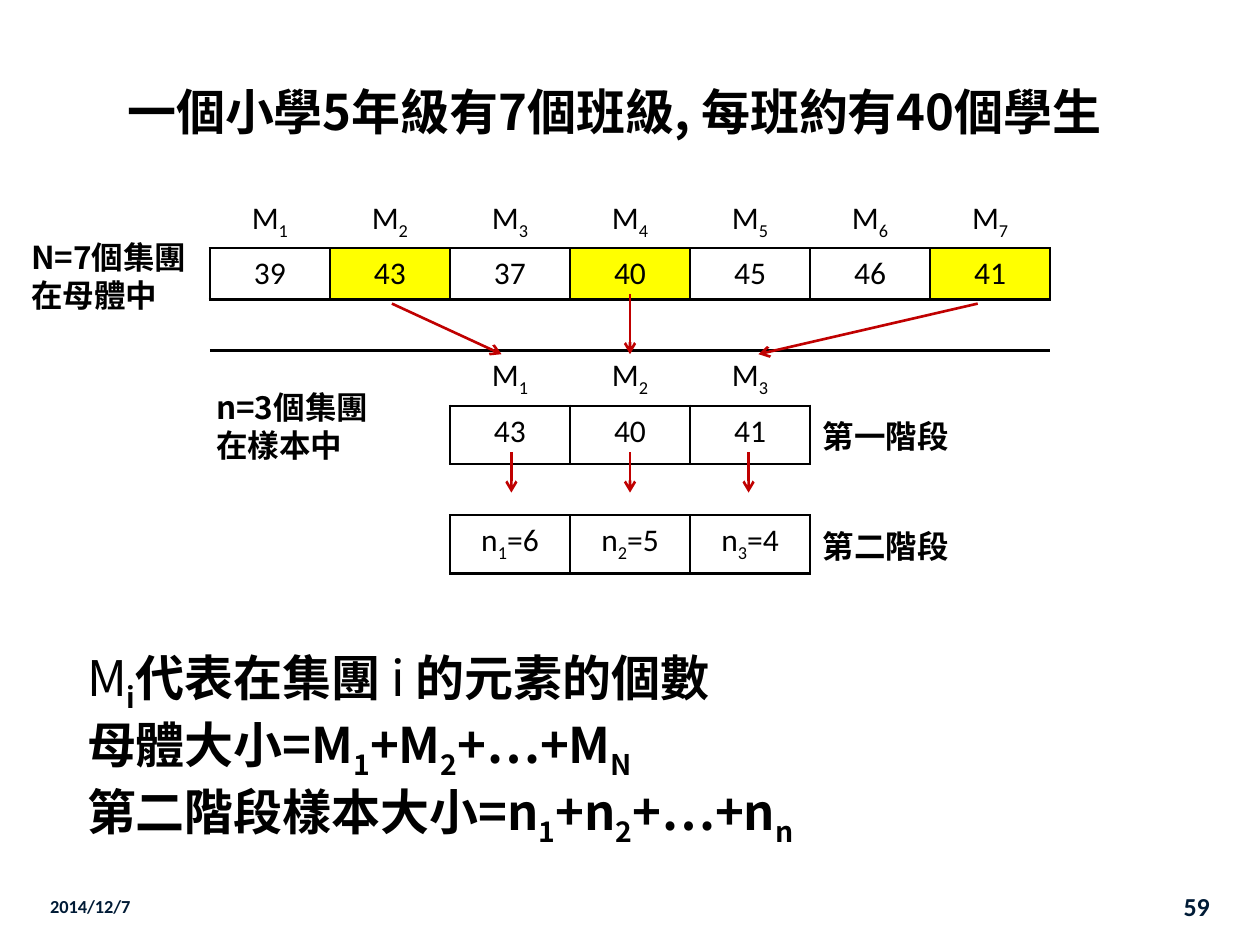
import lxml.etree
import pptx
import pptx.dml.color
import pptx.enum.shapes
import pptx.enum.text
import pptx.oxml.ns
import pptx.util

Cm, Pt = pptx.util.Cm, pptx.util.Pt
ALIGN = pptx.enum.text.PP_ALIGN
ANCHOR = pptx.enum.text.MSO_ANCHOR
qn = pptx.oxml.ns.qn

THEME = {
    "latin": "Calibri", "cjk": "Noto Sans CJK SC",
    "ink": "000000", "footer": "001B36", "arrow": "C00000", "chosen": "FFFF00",
    "large": 28, "normal": 18, "date": 10.5, "number": 14.8, "line": 1.5,
}
NO_GRID = "{2D5ABB26-0587-4C30-8999-92F81FD0307C}"

# Markup: ~subscript~ and *regular weight inside bold*
TITLE = ["一個小學5年級有7個班級, 每班約有40個學生"]
NOTES = [
    "*M*~i~代表在集團 *i* 的元素的個數",
    "母體大小=M~1~+M~2~+…+M~N~",
    "第二階段樣本大小=n~1~+n~2~+…+n~n~",
]
SIDE_LABELS = [
    (["N=7個集團", "在母體中"], (0.38, 4.67, 3.84, 1.8)),
    (["n=3個集團", "在樣本中"], (4.11, 7.7, 3.71, 1.8)),
]
CLASS_SIZES = [39, 43, 37, 40, 45, 46, 41]
CHOSEN = [1, 3, 6]
SAMPLE_SIZES = [6, 5, 4]
STAGES = {4: "第一階段", 6: "第二階段"}

TABLE_LEFT, TABLE_TOP, COLUMN, ROW = 4.23, 3.89, 2.42, 1.03
ROWS, SAMPLE_COLUMN, STAGE_COLUMN = 7, 2, 5
ARROWS = [
    (12.7, 5.92, 12.7, 7.14),
    (7.9, 6.12, 10.11, 7.14),
    (19.71, 6.12, 15.29, 7.14),
] + [(12.7 + offset, 9.12, 12.7 + offset, 9.93) for offset in (-2.39, 0, 2.39)]


def color(name):
    return pptx.dml.color.RGBColor.from_string(THEME[name])


def add_runs(paragraph, markup, size, face, bold=False, ink="ink"):
    for i, chunk in enumerate(markup.split("*")):
        for j, text in enumerate(chunk.split("~")):
            if not text:
                continue
            run = paragraph.add_run()
            run.text = text
            formats = {"size": Pt(THEME[size]), "name": THEME[face],
                       "bold": bold and i % 2 == 0}
            for name, value in formats.items():
                setattr(run.font, name, value)
            run.font.color.rgb = color(ink)
            properties = run._r.get_or_add_rPr()
            lxml.etree.SubElement(properties, qn("a:ea"), typeface=THEME[face])
            properties.set("lang", "zh-TW")
            if j % 2:
                properties.set("baseline", "-25000")


def write(shape, lines, box, size, face="cjk", align=ALIGN.LEFT,
          anchor=ANCHOR.TOP, ink="ink"):
    shape.left, shape.top, shape.width, shape.height = map(Cm, box)
    frame = shape.text_frame
    formats = {"word_wrap": True, "vertical_anchor": anchor,
               "auto_size": pptx.enum.text.MSO_AUTO_SIZE.NONE}
    for name, value in formats.items():
        setattr(frame, name, value)
    for index, line in enumerate(lines):
        paragraph = frame.add_paragraph() if index else frame.paragraphs[0]
        paragraph.alignment = align
        paragraph.space_before = Pt(0)
        properties = paragraph._p.get_or_add_pPr()
        properties.set("marL", "0")
        properties.set("indent", "0")
        lxml.etree.SubElement(properties, qn("a:buNone"))
        add_runs(paragraph, line, size, face, True, ink)


def set_borders(cell, sides):
    """Draw the given sides, a string out of L, R, T and B."""
    properties = cell._tc.get_or_add_tcPr()
    for index, side in enumerate(sides):
        line = lxml.etree.Element(qn("a:ln" + side), w=str(Pt(THEME["line"])))
        fill = lxml.etree.SubElement(line, qn("a:solidFill"))
        lxml.etree.SubElement(fill, qn("a:srgbClr"), val=THEME["ink"])
        properties.insert(index, line)


def add_cluster_table(slide):
    columns = len(CLASS_SIZES)
    frame = slide.shapes.add_table(ROWS, columns, Cm(TABLE_LEFT), Cm(TABLE_TOP),
                                   Cm(COLUMN * columns), Cm(ROW * ROWS))
    table = frame.table
    table.first_row = table.horz_banding = False
    table._tbl.tblPr.find(qn("a:tableStyleId")).text = NO_GRID
    for column in table.columns:
        column.width = Cm(COLUMN)

    texts, boxed = {}, set()
    for column, size in enumerate(CLASS_SIZES):
        texts[0, column] = f"M~{column + 1}~"
        texts[1, column] = str(size)
        boxed.add((1, column))
    for index, (chosen, size) in enumerate(zip(CHOSEN, SAMPLE_SIZES)):
        column = SAMPLE_COLUMN + index
        texts[3, column] = f"M~{index + 1}~"
        texts[4, column] = str(CLASS_SIZES[chosen])
        texts[6, column] = f"n~{index + 1}~={size}"
        boxed |= {(4, column), (6, column)}

    for row in range(ROWS):
        for column in range(columns):
            cell = table.cell(row, column)
            if row == 1 and column in CHOSEN:
                cell.fill.solid()
                cell.fill.fore_color.rgb = color("chosen")
            else:
                cell.fill.background()
            if (row, column) in boxed:
                set_borders(cell, "LRTB")
            elif row == 2:
                set_borders(cell, "B")
            if (row, column) in texts:
                paragraph = cell.text_frame.paragraphs[0]
                paragraph.alignment = ALIGN.CENTER
                add_runs(paragraph, texts[row, column], "normal", "latin")
    for row, label in STAGES.items():
        cell = table.cell(row, STAGE_COLUMN)
        cell.merge(table.cell(row, STAGE_COLUMN + 1))
        add_runs(cell.text_frame.paragraphs[0], label, "normal", "cjk", True)


def add_arrow(slide, ends):
    arrow = slide.shapes.add_connector(
        pptx.enum.shapes.MSO_CONNECTOR.STRAIGHT, *map(Cm, ends))
    arrow.line.color.rgb = color("arrow")
    arrow.line.width = Pt(THEME["line"])
    lxml.etree.SubElement(arrow.line._get_or_add_ln(), qn("a:tailEnd"), type="arrow")
    lxml.etree.SubElement(arrow._element.spPr, qn("a:effectLst"))


def main():
    presentation = pptx.Presentation()
    presentation.slide_width, presentation.slide_height = Cm(25.4), Cm(19.05)
    slide = presentation.slides.add_slide(presentation.slide_layouts[1])

    def add_box():
        return slide.shapes.add_textbox(0, 0, 0, 0)

    footer = {"face": "latin", "anchor": ANCHOR.MIDDLE, "ink": "footer"}
    write(add_box(), ["2014/12/7"], (0.76, 17.86, 5.92, 0.81), "date", **footer)
    write(add_box(), ["59"], (22.2, 17.86, 2.44, 0.81), "number",
          align=ALIGN.RIGHT, **footer)
    add_cluster_table(slide)
    for ends in ARROWS:
        add_arrow(slide, ends)
    write(slide.shapes.title, TITLE, (2.31, 1.52, 20.35, 1.45), "large")
    for lines, box in SIDE_LABELS:
        write(add_box(), lines, box, "normal")
    write(slide.placeholders[1], NOTES, (1.5, 12.93, 16, 3.84), "large")
    presentation.save("out.pptx")


if __name__ == "__main__":
    main()
